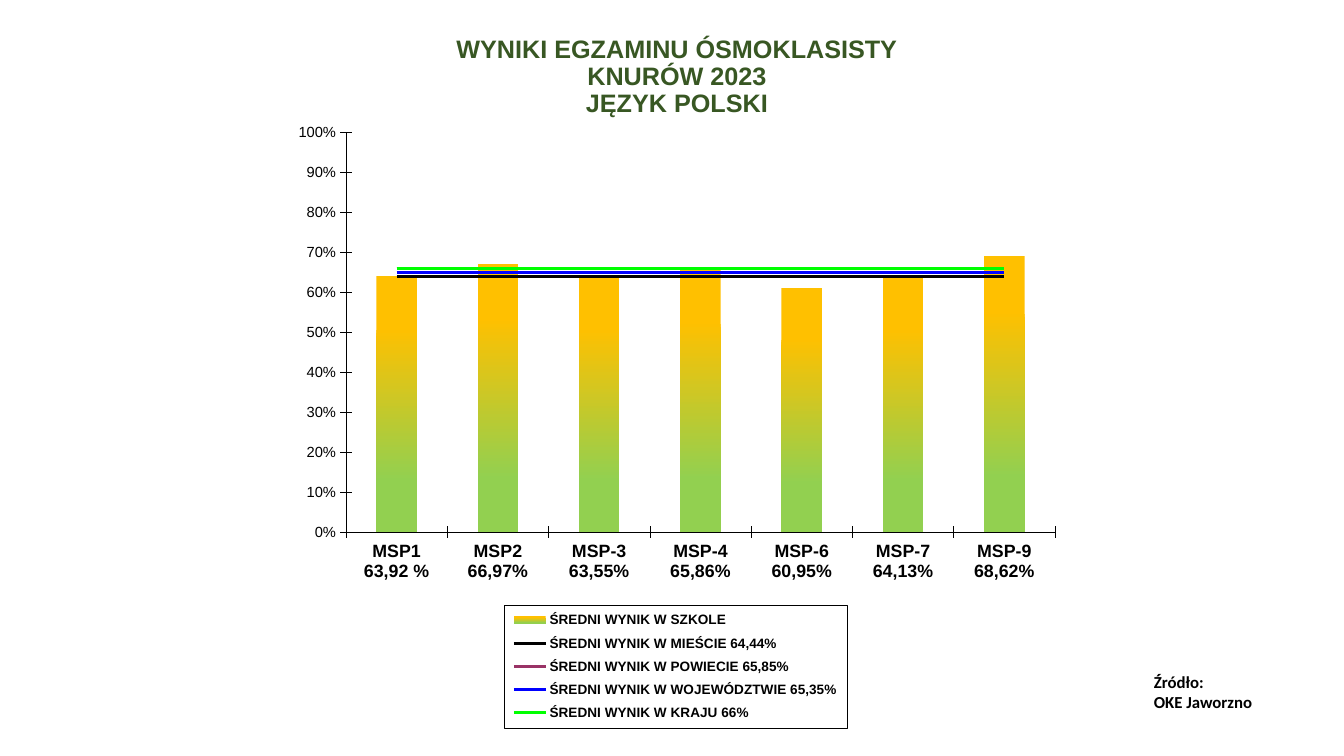
from dataclasses import dataclass

from lxml.etree import _Element as Node
from pptx import Presentation
from pptx.chart.chart import Chart
from pptx.chart.data import CategoryChartData as ChartData
from pptx.dml.color import RGBColor as Rgb
from pptx.enum.chart import XL_CHART_TYPE as Kind
from pptx.enum.chart import XL_LEGEND_POSITION as Side
from pptx.enum.chart import XL_MARKER_STYLE as Mark
from pptx.enum.chart import XL_TICK_MARK as Tick
from pptx.enum.text import MSO_ANCHOR as Anchor
from pptx.enum.text import PP_ALIGN as Align
from pptx.oxml import parse_xml
from pptx.oxml.ns import nsdecls, qn
from pptx.slide import Slide
from pptx.text.text import Font
from pptx.util import Emu, Pt


@dataclass(frozen=True)
class Theme:
    head: str = "Arial"
    body: str = "Calibri"
    green: str = "385723"
    black: str = "000000"
    plum: str = "993366"
    blue: str = "0000FF"
    lime: str = "00FF00"
    top: str = "FFC000"
    base: str = "92D050"
    title: float = 18
    note: float = 12
    chart: float = 10.5
    cats: float = 12.7
    legend: float = 9.7
    line: float = 2.1
    axis: float = 0.25


@dataclass(frozen=True)
class Box:
    x: int
    y: int
    w: int
    h: int


@dataclass(frozen=True)
class Label:
    box: Box
    lines: tuple[str, ...]
    face: str
    size: float
    color: str
    align: Align
    anchor: Anchor
    space: float


@dataclass(frozen=True)
class Mean:
    name: str
    value: float
    color: str


THEME = Theme()
SCALE = 914400 / 100.8  # EMU in one px
PAGE = Box(0, 0, 1344, 756)
FRAME = Box(244, 124, 911, 618)
PLOT = Box(346, 132, 709, 400)
LEGEND = Box(504, 605, 343, 123)

LABELS = (
    Label(Box(173, 37, 1008, 86),
          ("WYNIKI EGZAMINU ÓSMOKLASISTY\vKNURÓW 2023\vJĘZYK POLSKI",),
          THEME.head, THEME.title, THEME.green, Align.CENTER, Anchor.BOTTOM, 0.9),
    Label(Box(1144, 667, 187, 50), ("Źródło:", "OKE Jaworzno"),
          THEME.body, THEME.note, THEME.black, Align.LEFT, Anchor.TOP, 1.0),
)

SCHOOLS = {
    "MSP1\n63,92 %": 0.64,
    "MSP2\n66,97%": 0.67,
    "MSP-3\n63,55%": 0.64,
    "MSP-4\n65,86%": 0.66,
    "MSP-6\n60,95%": 0.61,
    "MSP-7\n64,13%": 0.64,
    "MSP-9\n68,62%": 0.69,
}
MEANS = (
    Mean("ŚREDNI WYNIK W MIEŚCIE 64,44%", 0.64, THEME.black),
    Mean("ŚREDNI WYNIK W POWIECIE 65,85%", 0.66, THEME.plum),
    Mean("ŚREDNI WYNIK W WOJEWÓDZTWIE 65,35%", 0.65, THEME.blue),
    Mean("ŚREDNI WYNIK W KRAJU 66%", 0.66, THEME.lime),
)


def emu(px: int) -> Emu:
    return Emu(round(px * SCALE))


def place(box: Box) -> tuple[Emu, Emu, Emu, Emu]:
    return emu(box.x), emu(box.y), emu(box.w), emu(box.h)


def style(font: Font, size: float, face: str = THEME.head,
          color: str = THEME.black, bold: bool = False) -> None:
    font.name, font.size, font.bold = face, Pt(size), bold
    font.color.rgb = Rgb.from_string(color)


def write(slide: Slide, label: Label) -> None:
    frame = slide.shapes.add_textbox(*place(label.box)).text_frame
    frame.word_wrap = True
    frame.vertical_anchor = label.anchor
    frame.text = "\n".join(label.lines)
    for par in frame.paragraphs:
        par.alignment, par.line_spacing = label.align, label.space
        style(par.font, label.size, label.face, label.color, True)


def fix(node: Node, box: Box, index: int, inner: bool = False) -> None:
    """Pin a chart part to a box inside the chart frame."""
    for old in node.findall(qn("c:layout")):
        node.remove(old)
    target = '<c:layoutTarget val="inner"/>' if inner else ""
    parts = {
        "x": (box.x - FRAME.x) / FRAME.w, "y": (box.y - FRAME.y) / FRAME.h,
        "w": box.w / FRAME.w, "h": box.h / FRAME.h,
    }
    modes = "".join(f'<c:{key}Mode val="edge"/>' for key in "xy")
    sizes = "".join(f'<c:{key} val="{val:.4f}"/>' for key, val in parts.items())
    node.insert(index, parse_xml(
        f'<c:layout {nsdecls("c")}><c:manualLayout>{target}{modes}{sizes}'
        "</c:manualLayout></c:layout>"))


def split(chart: Chart) -> None:
    """Move the means to a line plot on hidden second axes."""
    bars = chart.plots[0]._element
    lines = parse_xml(
        f'<c:lineChart {nsdecls("c")}><c:grouping val="standard"/>'
        '<c:varyColors val="0"/><c:marker val="1"/>'
        '<c:axId val="5001"/><c:axId val="5002"/></c:lineChart>')
    for ser in bars.findall(qn("c:ser"))[1:]:
        for flag in ser.findall(qn("c:invertIfNegative")):
            ser.remove(flag)
        lines.find(qn("c:marker")).addprevious(ser)
    bars.addnext(lines)
    area = bars.getparent()
    limits = '<c:max val="1"/><c:min val="0"/>'
    for tag, own, other, pos, bounds, cross in (
            ("catAx", 5001, 5002, "b", "", "autoZero"),
            ("valAx", 5002, 5001, "r", limits, "max")):
        area.findall(qn("c:valAx"))[-1].addnext(parse_xml(
            f'<c:{tag} {nsdecls("c")}><c:axId val="{own}"/><c:scaling>'
            f'<c:orientation val="minMax"/>{bounds}</c:scaling>'
            f'<c:delete val="1"/><c:axPos val="{pos}"/>'
            f'<c:crossAx val="{other}"/><c:crosses val="{cross}"/></c:{tag}>'))
    fix(area, PLOT, 0, True)


def draw(slide: Slide) -> None:
    data = ChartData(number_format="0%")
    data.categories = list(SCHOOLS)
    data.add_series("ŚREDNI WYNIK W SZKOLE", list(SCHOOLS.values()))
    for mean in MEANS:
        data.add_series(mean.name, [mean.value] * len(SCHOOLS))
    chart = slide.shapes.add_chart(Kind.COLUMN_CLUSTERED, *place(FRAME), data).chart
    chart.has_title = False
    style(chart.font, THEME.chart)

    # Axes
    left, base = chart.value_axis, chart.category_axis
    left.has_major_gridlines = False
    left.minimum_scale, left.maximum_scale, left.major_unit = 0, 1, 0.1
    left.tick_labels.number_format = "0%"
    left.tick_labels.number_format_is_linked = False
    for axis, size, bold in ((left, THEME.chart, False), (base, THEME.cats, True)):
        axis.major_tick_mark, axis.minor_tick_mark = Tick.CROSS, Tick.NONE
        axis.format.line.width = Pt(THEME.axis)
        axis.format.line.color.rgb = Rgb.from_string(THEME.black)
        style(axis.tick_labels.font, size, bold=bold)

    # School columns and mean lines
    split(chart)
    bars, lines = chart.plots
    bars.gap_width, bars.vary_by_categories = 150, False
    fill = bars.series[0].format.fill
    fill.gradient()
    fill.gradient_angle = 270
    shades = ((0.2, THEME.top), (0.8, THEME.base))
    for stop, (pos, color) in zip(fill.gradient_stops, shades):
        stop.position, stop.color.rgb = pos, Rgb.from_string(color)
    for ser, mean in zip(lines.series, MEANS):
        ser.smooth, ser.marker.style = False, Mark.NONE
        ser.format.line.width = Pt(THEME.line)
        ser.format.line.color.rgb = Rgb.from_string(mean.color)

    # Framed legend
    chart.has_legend = True
    legend = chart.legend
    legend.position, legend.include_in_layout = Side.RIGHT, False
    style(legend.font, THEME.legend, bold=True)
    node = legend._element
    fix(node, LEGEND, 1)
    node.find(qn("c:txPr")).addprevious(parse_xml(
        f'<c:spPr {nsdecls("c", "a")}><a:ln w="{Pt(THEME.axis)}"><a:solidFill>'
        f'<a:srgbClr val="{THEME.black}"/></a:solidFill></a:ln></c:spPr>'))


def main() -> None:
    deck = Presentation()
    deck.slide_width, deck.slide_height = emu(PAGE.w), emu(PAGE.h)
    slide = deck.slides.add_slide(deck.slide_layouts[6])
    draw(slide)
    for label in LABELS:
        write(slide, label)
    deck.save("out.pptx")


if __name__ == "__main__":
    main()
